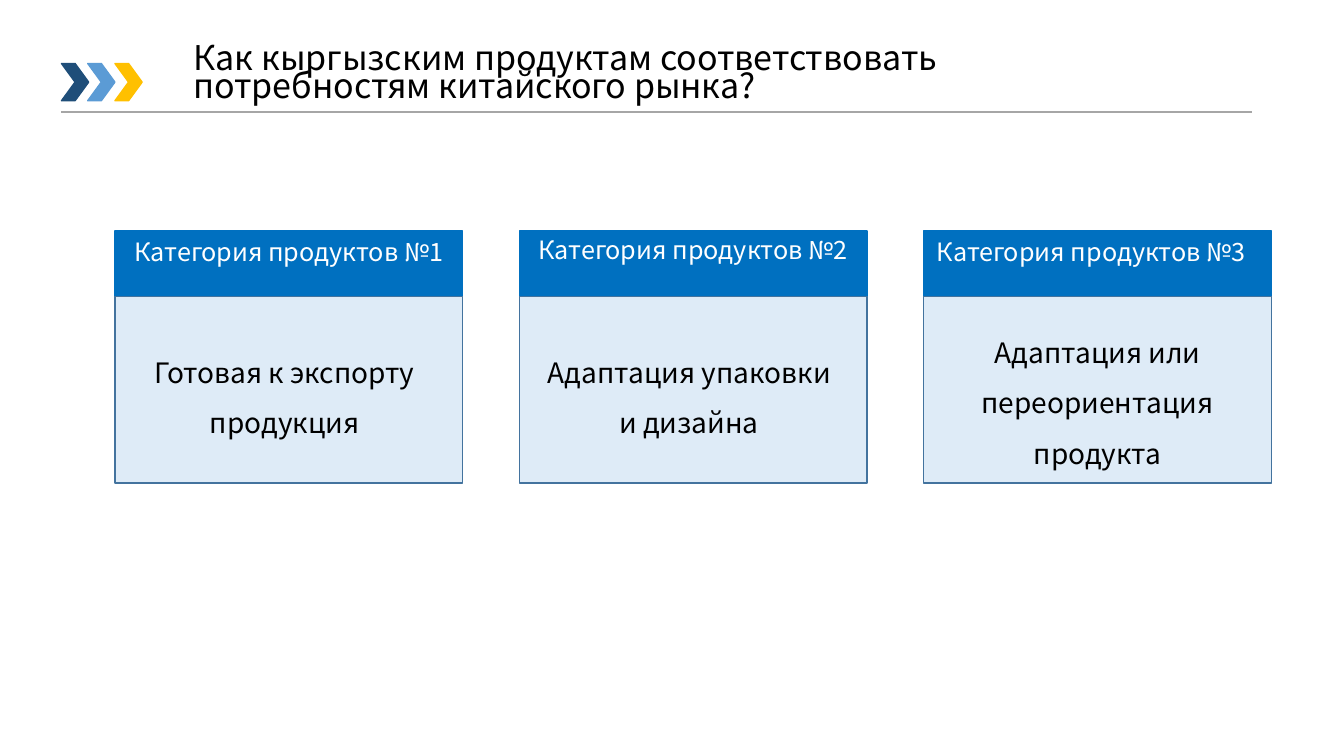
from lxml import etree
from pptx import Presentation
from pptx.dml.color import RGBColor
from pptx.enum.shapes import MSO_CONNECTOR, MSO_SHAPE
from pptx.enum.text import MSO_ANCHOR, PP_ALIGN
from pptx.oxml.ns import qn
from pptx.util import Pt

CHEVRON, RECTANGLE = MSO_SHAPE.CHEVRON, MSO_SHAPE.RECTANGLE
STRAIGHT = MSO_CONNECTOR.STRAIGHT
LEFT, CENTER = PP_ALIGN.LEFT, PP_ALIGN.CENTER
TOP, MIDDLE = MSO_ANCHOR.TOP, MSO_ANCHOR.MIDDLE

PX = 9144
FONT = "Noto Sans CJK SC"
COLORS = {
    "navy": "1F4E79",
    "sky": "5B9BD5",
    "gold": "FFC000",
    "rule": "A6A6A6",
    "header": "0070C0",
    "panel": "DEEBF7",
    "border": "43739E",
    "black": "000000",
    "white": "FFFFFF",
}


def add_block(kind, left, top, width, height, fill, line):
    block = slide.shapes.add_shape(kind, left * PX, top * PX, width * PX, height * PX)
    block.shadow.inherit = False
    block.fill.solid()
    block.fill.fore_color.rgb = RGBColor.from_string(COLORS[fill])
    block.line.color.rgb = RGBColor.from_string(COLORS[line])
    block.line.width = Pt(1)


def write_text(box, text, size, color, spacing, align, anchor):
    frame = box.text_frame
    frame.word_wrap = True
    frame.vertical_anchor = anchor
    para = frame.paragraphs[0]
    for name, value in {"alignment": align, "line_spacing": spacing}.items():
        setattr(para, name, value)
    span = para.add_run()
    for name, value in {"text": text}.items():
        setattr(span, name, value)
    for name, value in {"name": FONT, "size": Pt(size)}.items():
        setattr(span.font, name, value)
    span.font.color.rgb = RGBColor.from_string(COLORS[color])


deck = Presentation()
deck.slide_width, deck.slide_height = 1333 * PX, 750 * PX
slide = deck.slides.add_slide(deck.slide_layouts[5])

title = slide.shapes.title
for name, value in {"left": 182, "top": 40, "width": 909, "height": 71}.items():
    setattr(title, name, value * PX)
write_text(
    title,
    "Как кыргызским продуктам соответствовать потребностям китайского рынка?",
    24.3, "black", 0.7, LEFT, MIDDLE,
)

for index, color in enumerate(["navy", "sky", "gold"]):
    add_block(CHEVRON, 61 + round(26.5 * index), 63, 27, 37, color, color)

rule = slide.shapes.add_connector(STRAIGHT, 61 * PX, 111 * PX, 1242 * PX, 111 * PX)
rule.line.color.rgb = RGBColor.from_string(COLORS["rule"])
rule.line.width = Pt(1.5)
etree.SubElement(rule._element.spPr, qn("a:effectLst"))

categories = [
    ("Готовая к экспорту продукция", 6, 229, 12, 331, 162),
    ("Адаптация упаковки и дизайна", 6, 228, 12, 331, 111),
    ("Адаптация или переориентация продукта", 0, 229, 16, 311, 162),
]
for index, category in enumerate(categories):
    text, label_inset, label_top, text_inset, text_top, text_height = category
    left = 114 + 401 * index
    add_block(RECTANGLE, left, 229, 345, 65, "header", "header")
    add_block(RECTANGLE, left, 294, 345, 185, "panel", "border")
    label = slide.shapes.add_textbox(
        (left + label_inset) * PX, label_top * PX, 333 * PX, 71 * PX
    )
    write_text(label, f"Категория продуктов №{index + 1}", 18, "white", 1.0, CENTER, TOP)
    body = slide.shapes.add_textbox(
        (left + text_inset) * PX, text_top * PX, 313 * PX, text_height * PX
    )
    write_text(body, text, 20, "black", 1.5, CENTER, TOP)

deck.save("out.pptx")
